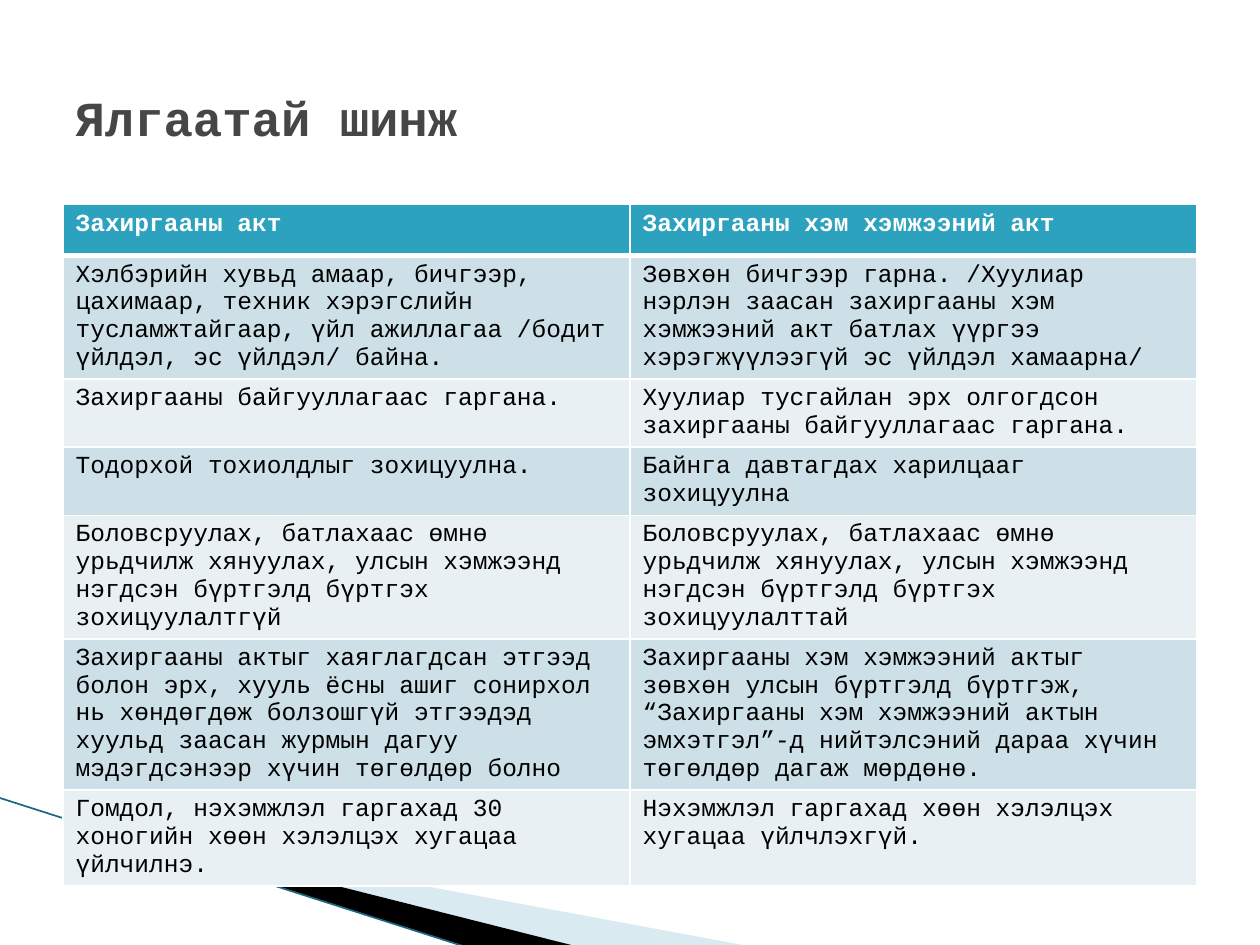
from dataclasses import dataclass

from lxml.etree import SubElement
from pptx import Presentation
from pptx.dml.color import RGBColor
from pptx.enum.text import MSO_ANCHOR, MSO_AUTO_SIZE, PP_ALIGN
from pptx.enum.shapes import MSO_CONNECTOR
from pptx.oxml.ns import qn
from pptx.util import Pt


@dataclass(frozen=True)
class Theme:
    font: str = "Courier New"
    title_size: float = 28
    cell_size: float = 14
    title: str = "464646"
    header: str = "2DA2BF"
    bands: tuple = ("CDE0E8", "E8F0F4")
    white: str = "FFFFFF"
    black: str = "000000"
    wedge: str = "A0CBDC"
    line: str = "17697C"


THEME = Theme()

ROWS = [
    ("Захиргааны акт", "Захиргааны хэм хэмжээний акт"),
    ("Хэлбэрийн хувьд амаар, бичгээр, цахимаар, техник хэрэгслийн "
     "тусламжтайгаар, үйл ажиллагаа /бодит үйлдэл, эс үйлдэл/ байна.",
     "Зөвхөн бичгээр гарна. /Хуулиар нэрлэн заасан захиргааны хэм хэмжээний "
     "акт батлах үүргээ хэрэгжүүлээгүй эс үйлдэл хамаарна/"),
    ("Захиргааны байгууллагаас гаргана.",
     "Хуулиар тусгайлан эрх олгогдсон захиргааны байгууллагаас гаргана."),
    ("Тодорхой тохиолдлыг зохицуулна.",
     "Байнга давтагдах харилцааг зохицуулна"),
    ("Боловсруулах, батлахаас өмнө урьдчилж хянуулах, улсын хэмжээнд "
     "нэгдсэн бүртгэлд бүртгэх зохицуулалтгүй",
     "Боловсруулах, батлахаас өмнө урьдчилж хянуулах, улсын хэмжээнд "
     "нэгдсэн бүртгэлд бүртгэх зохицуулалттай"),
    ("Захиргааны актыг хаяглагдсан этгээд болон эрх, хууль ёсны ашиг сонирхол "
     "нь хөндөгдөж болзошгүй этгээдэд хуульд заасан журмын дагуу "
     "мэдэгдсэнээр хүчин төгөлдөр болно",
     "Захиргааны хэм хэмжээний актыг зөвхөн улсын бүртгэлд бүртгэж, "
     "“Захиргааны хэм хэмжээний актын эмхэтгэл”-д нийтэлсэний дараа хүчин "
     "төгөлдөр дагаж мөрдөнө."),
    ("Гомдол, нэхэмжлэл гаргахад 30 хоногийн хөөн хэлэлцэх хугацаа үйлчилнэ.",
     "Нэхэмжлэл гаргахад хөөн хэлэлцэх хугацаа үйлчлэхгүй."),
]


def rgb(color):
    return RGBColor.from_string(color)


def write(tf, text, size, color, bold=False, align=PP_ALIGN.LEFT):
    p = tf.paragraphs[0]
    p.alignment = align
    r = p.add_run()
    r.text = text
    r.font.name = THEME.font
    r.font.size = Pt(size)
    r.font.bold = bold
    r.font.color.rgb = rgb(color)


def add_wedge(slide, points, color, opacity=100):
    """Draw a filled outline through points; opacity is in percent."""
    start, *rest = [(Pt(x), Pt(y)) for x, y in points]
    builder = slide.shapes.build_freeform(*start, scale=1.0)
    builder.add_line_segments(rest, close=True)
    sp = builder.convert_to_shape()
    sp.shadow.inherit = False
    sp.fill.solid()
    sp.fill.fore_color.rgb = rgb(color)
    sp.line.fill.background()
    if opacity < 100:
        clr = sp.fill._xPr.find(qn("a:solidFill"))[0]
        SubElement(clr, qn("a:alpha"), val=str(opacity * 1000))


def add_line(slide, start, end, color, width):
    ends = [Pt(v) for v in (*start, *end)]
    line = slide.shapes.add_connector(MSO_CONNECTOR.STRAIGHT, *ends)
    line.line.color.rgb = rgb(color)
    line.line.width = Pt(width)
    SubElement(line._element.spPr, qn("a:effectLst"))


def set_borders(cell, color, **widths):
    """Set the cell's borders; they must be added before its fill."""
    tcPr = cell._tc.get_or_add_tcPr()
    for side in "LRTB":
        ln = SubElement(tcPr, qn(f"a:ln{side}"), w=str(Pt(widths.get(side, 1))))
        fill = SubElement(ln, qn("a:solidFill"))
        SubElement(fill, qn("a:srgbClr"), val=color)


def add_comparison(slide, left, top, width, row_height):
    height = row_height * len(ROWS)
    frame = slide.shapes.add_table(len(ROWS), len(ROWS[0]), Pt(left), Pt(top),
                                   Pt(width), Pt(height))
    for i, texts in enumerate(ROWS):
        header = i == 0
        fill = THEME.header if header else THEME.bands[(i - 1) % 2]
        widths = {0: {"B": 3}, 1: {"T": 3}}.get(i, {})
        for j, text in enumerate(texts):
            cell = frame.table.cell(i, j)
            set_borders(cell, THEME.white, **widths)
            cell.fill.solid()
            cell.fill.fore_color.rgb = rgb(fill)
            write(cell.text_frame, text, THEME.cell_size,
                  THEME.white if header else THEME.black, bold=header)


def set_title(slide, text, left, top, width, height):
    title = slide.shapes.title
    title.left, title.top = Pt(left), Pt(top)
    title.width, title.height = Pt(width), Pt(height)
    tf = title.text_frame
    tf.auto_size = MSO_AUTO_SIZE.NONE
    tf.vertical_anchor = MSO_ANCHOR.MIDDLE
    write(tf, text, THEME.title_size, THEME.title, bold=True)


def main():
    prs = Presentation()
    prs.slide_width, prs.slide_height = Pt(720), Pt(540)
    slide = prs.slides.add_slide(prs.slide_layouts[5])
    set_title(slide, "Ялгаатай шинж", 36, 21.6, 648, 90)
    add_wedge(slide, [(39.6, 468.7), (428.4, 540.7), (328.3, 540.7),
                      (39.6, 468)], THEME.wedge, opacity=40)
    add_wedge(slide, [(38.2, 467.3), (329, 540.7), (267.8, 541.4),
                      (38.9, 468)], THEME.black)
    add_line(slide, (-0.7, 455.8), (267.1, 541.4), THEME.line, 0.95)
    add_comparison(slide, 36, 116.8, 648, 29.2)
    prs.save("out.pptx")


if __name__ == "__main__":
    main()
